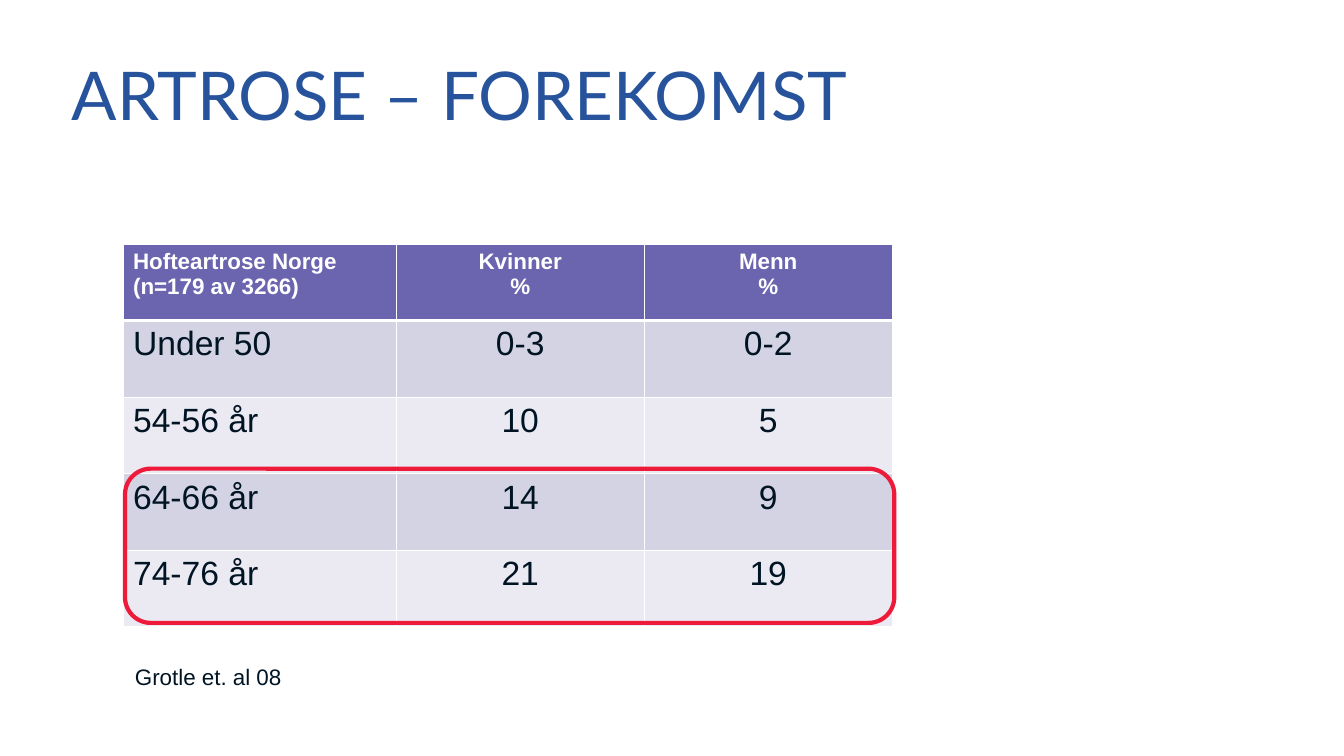
from lxml.etree import SubElement
from pptx import Presentation
from pptx.dml.color import RGBColor
from pptx.enum.shapes import MSO_SHAPE as Shape
from pptx.enum.text import MSO_ANCHOR as Anchor, PP_ALIGN as Align
from pptx.oxml.ns import qn
from pptx.util import Inches, Pt

BLUE = RGBColor(0x26, 0x53, 0x9B)
INK = RGBColor(0x00, 0x14, 0x23)
WHITE = RGBColor(0xFF, 0xFF, 0xFF)
PURPLE = RGBColor(0x6B, 0x64, 0xAF)
LILAC = RGBColor(0xD4, 0xD3, 0xE3)
PALE = RGBColor(0xEB, 0xEA, 0xF2)
RED = RGBColor(0xED, 0x1A, 0x3A)

HEADER = ["Hofteartrose Norge (n=179 av 3266)", "Kvinner\n%", "Menn\n%"]
PREVALENCE = [
    ["Under 50", "0-3", "0-2"],
    ["54-56 år", "10", "5"],
    ["64-66 år", "14", "9"],
    ["74-76 år", "21", "19"],
]


class SlideBuilder:
    body_font = "Arial"
    title_font = "Lato"

    def __init__(self, page):
        self.page = page

    def add_text(self, frame, text, size, color, font=body_font, bold=False, align=Align.LEFT):
        for index, line in enumerate(text.split("\n")):
            para = frame.paragraphs[0] if index == 0 else frame.add_paragraph()
            para.alignment = align
            span = para.add_run()
            span.text = line
            span.font.name = font
            span.font.size = Pt(size)
            span.font.bold = bold
            span.font.color.rgb = color

    def text_box(self, left, top, width, height):
        box = self.page.shapes.add_textbox(
            Inches(left), Inches(top), Inches(width), Inches(height))
        box.text_frame.word_wrap = True
        return box.text_frame

    def title(self, text, left, top, width, height):
        frame = self.text_box(left, top, width, height)
        frame.margin_left = frame.margin_right = 0
        frame.margin_top = frame.margin_bottom = 0
        frame.vertical_anchor = Anchor.MIDDLE
        self.add_text(frame, text, 48, BLUE, self.title_font)

    def note(self, text, left, top, width, height):
        self.add_text(self.text_box(left, top, width, height), text, 16, INK)

    def borders(self, cell, top, bottom):
        properties = cell._tc.get_or_add_tcPr()
        for side, points in (("L", 1), ("R", 1), ("T", top), ("B", bottom)):
            line = SubElement(properties, qn(f"a:ln{side}"), w=str(Pt(points)))
            fill = SubElement(line, qn("a:solidFill"))
            SubElement(fill, qn("a:srgbClr"), val=str(WHITE))

    def table(self, header, body, left, top, widths, row_height):
        rows = [header] + body
        table = self.page.shapes.add_table(
            len(rows), len(widths), Inches(left), Inches(top),
            Inches(sum(widths)), Inches(row_height * len(rows))).table
        table.first_row = table.horz_banding = False
        for column, width in zip(table.columns, widths):
            column.width = Inches(width)
        for r, texts in enumerate(rows):
            table.rows[r].height = Inches(row_height)
            is_header = r == 0
            fill = PURPLE if is_header else LILAC if r % 2 else PALE
            size, color = (16, WHITE) if is_header else (24, INK)
            for c, text in enumerate(texts):
                cell = table.cell(r, c)
                self.borders(cell, 3 if r == 1 else 1, 3 if is_header else 1)
                cell.fill.solid()
                cell.fill.fore_color.rgb = fill
                self.add_text(cell.text_frame, text, size, color, bold=is_header,
                              align=Align.CENTER if c else Align.LEFT)

    def highlight(self, left, top, width, height):
        frame = self.page.shapes.add_shape(
            Shape.ROUNDED_RECTANGLE,
            Inches(left), Inches(top), Inches(width), Inches(height))
        frame.shadow.inherit = False
        frame.fill.background()
        frame.line.color.rgb = RED
        frame.line.width = Pt(3)


def main():
    deck = Presentation()
    deck.slide_width = Inches(13.33)
    deck.slide_height = Inches(7.5)
    slide = SlideBuilder(deck.slides.add_slide(deck.slide_layouts[6]))
    slide.title("ARTROSE – FOREKOMST", 0.71, 0.5, 12, 0.85)
    slide.note("Grotle et. al 08", 1.24, 6.53, 3.9, 0.37)
    slide.table(HEADER, PREVALENCE, 1.22, 2.42, [2.71, 2.46, 2.46], 0.76)
    slide.highlight(1.24, 4.65, 7.63, 1.53)
    deck.save("out.pptx")


if __name__ == "__main__":
    main()
